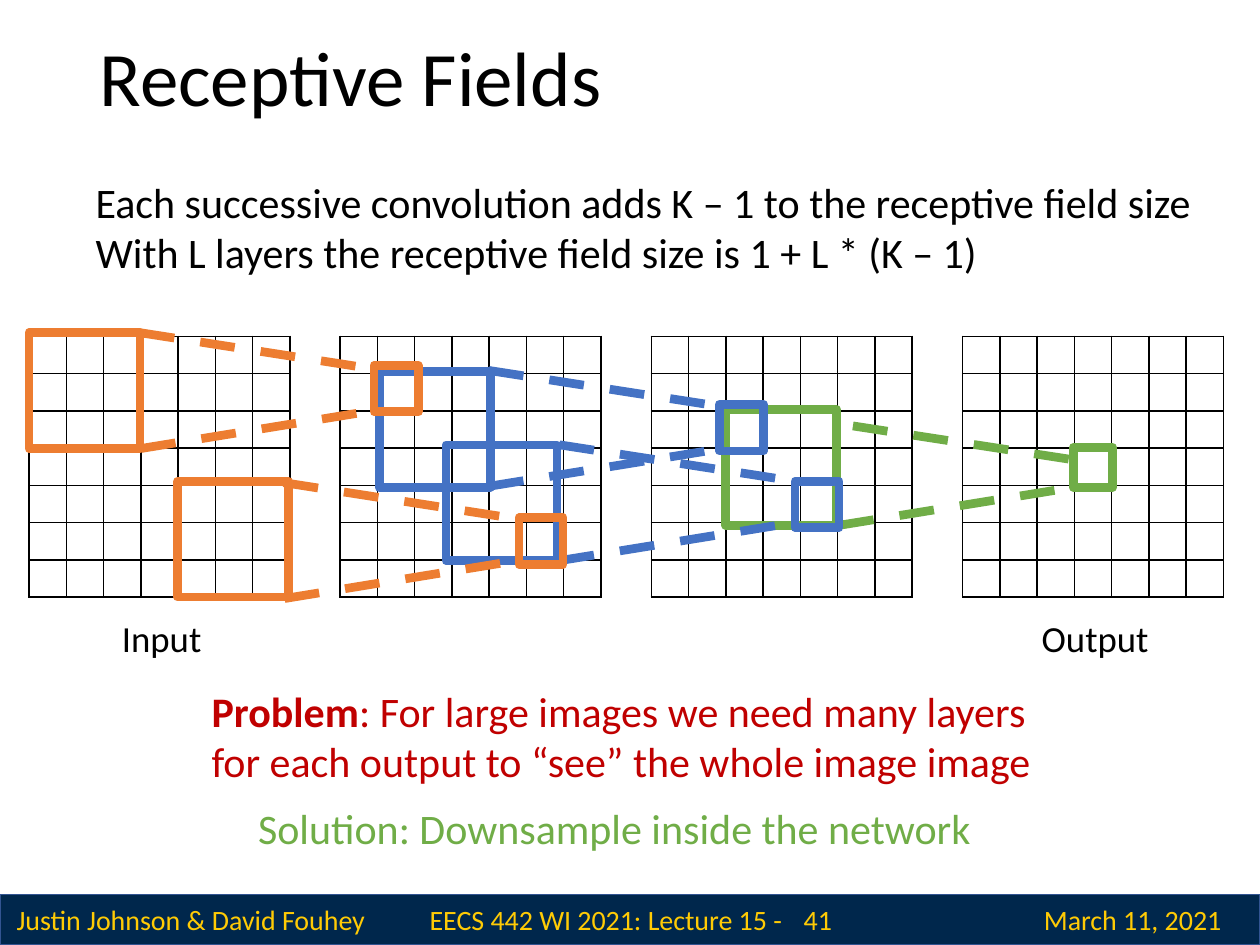
from lxml import etree
from pptx import Presentation
from pptx.dml.color import RGBColor
from pptx.enum.dml import MSO_LINE
from pptx.enum.shapes import MSO_CONNECTOR, MSO_SHAPE
from pptx.enum.text import MSO_ANCHOR, MSO_AUTO_SIZE, PP_ALIGN
from pptx.oxml import parse_xml
from pptx.oxml.ns import nsdecls, qn
from pptx.util import Pt

RECT = MSO_SHAPE.RECTANGLE
STRAIGHT = MSO_CONNECTOR.STRAIGHT
DASH = MSO_LINE.DASH
LEFT, CENTER = PP_ALIGN.LEFT, PP_ALIGN.CENTER
TOP, MIDDLE = MSO_ANCHOR.TOP, MSO_ANCHOR.MIDDLE
NO_FIT = MSO_AUTO_SIZE.NONE

BLACK, NAVY, MAIZE = "000000", "00274C", "FFCB05"
ORANGE, BLUE, GREEN, RED = "ED7D31", "4472C4", "70AD47", "C00000"
FIELD = (63.4, 66.2)
UNIT = (25.2, 26.6)
OUTPUT_UNIT = (22.3, 23)
CELLS = 7
CELL = 21.3


def rgb(value):
    return RGBColor.from_string(value)


class Deck:
    font = "Calibri"
    stroke = 5

    def __init__(self, prs):
        self.slide = prs.slides.add_slide(prs.slide_layouts[5])

    def style(self, p, size, color, align=LEFT):
        p.alignment = align
        p.font.name = self.font
        p.font.size = Pt(size)
        p.font.color.rgb = rgb(color)

    def title(self, text, x, y, w, h):
        sp = self.slide.shapes.title
        sp.left, sp.top, sp.width, sp.height = Pt(x), Pt(y), Pt(w), Pt(h)
        tf = sp.text_frame
        tf.text = text
        tf.auto_size = NO_FIT
        tf.vertical_anchor = MIDDLE
        p = tf.paragraphs[0]
        p.line_spacing = 0.9
        self.style(p, 44, BLACK)

    def text(self, lines, x, y, w, h, size, color=BLACK, align=LEFT,
             anchor=TOP, wrap=True):
        sp = self.slide.shapes.add_textbox(Pt(x), Pt(y), Pt(w), Pt(h))
        tf = sp.text_frame
        tf.word_wrap = wrap
        tf.vertical_anchor = anchor
        for i, runs in enumerate(lines):
            p = tf.add_paragraph() if i else tf.paragraphs[0]
            self.style(p, size, color, align)
            for text, bold in runs:
                r = p.add_run()
                r.text = text
                if bold:
                    r.font.bold = True

    def rect(self, x, y, w, h, line, width=stroke, fill=None):
        sp = self.slide.shapes.add_shape(RECT, Pt(x), Pt(y), Pt(w), Pt(h))
        sp.shadow.inherit = False
        if fill:
            sp.fill.solid()
            sp.fill.fore_color.rgb = rgb(fill)
        else:
            sp.fill.background()
        sp.line.color.rgb = rgb(line)
        sp.line.width = Pt(width)

    def dashed(self, x1, y1, x2, y2, color):
        line = self.slide.shapes.add_connector(STRAIGHT, Pt(x1), Pt(y1), Pt(x2), Pt(y2))
        line.line.color.rgb = rgb(color)
        line.line.width = Pt(self.stroke)
        line.line.dash_style = DASH
        etree.SubElement(line._element.spPr, qn("a:effectLst"))

    def grid(self, x, y):
        side = Pt(CELLS * CELL)
        table = self.slide.shapes.add_table(CELLS, CELLS, Pt(x), Pt(y), side, side).table
        table.first_row = table.horz_banding = False
        for band in (*table.columns,):
            band.width = Pt(CELL)
        for band in table.rows:
            band.height = Pt(CELL)
        for cell in table.iter_cells():
            cell.margin_left = cell.margin_right = 0
            cell.margin_top = cell.margin_bottom = 0
            cell.fill.background()
            end = etree.SubElement(cell.text_frame.paragraphs[0]._p, qn("a:endParaRPr"))
            end.set("sz", "800")
            tc_pr = cell._tc.get_or_add_tcPr()
            for i, side_name in enumerate(("lnL", "lnR", "lnT", "lnB")):
                tc_pr.insert(i, parse_xml(
                    f'<a:{side_name} {nsdecls("a")} w="12700"><a:solidFill>'
                    f'<a:srgbClr val="{BLACK}"/></a:solidFill></a:{side_name}>'))


def main():
    prs = Presentation()
    prs.slide_width, prs.slide_height = Pt(720), Pt(540)
    deck = Deck(prs)

    deck.rect(0, 511.2, 720, 28.8, "325491", 1, NAVY)
    for text, x, w in (
        ("Justin Johnson & David Fouhey", 0.7, 216.7),
        ("March 11, 2021", 575.3, 144),
        ("EECS 442 WI 2021: Lecture 15 - ", 234, 228.2),
        ("41", 435.6, 63.4),
    ):
        deck.text([[(text, False)]], x, 511.9, w, 26.6, 16, MAIZE, CENTER, MIDDLE)

    deck.title("Receptive Fields", 49.7, 14.4, 620.6, 64.8)
    deck.text([
        [("Each successive convolution adds K – 1 to the receptive field size", False)],
        [("With L layers the receptive field size is 1 + L * (K – 1)", False)],
    ], 47.5, 97.2, 646.6, 65.5, 24, wrap=False)

    for i in range(4):
        deck.grid(16.6 + i * 177.8, 192.2)
    for text, x, w in (("Input", 62.6, 60.5), ("Output", 588.2, 76.3)):
        deck.text([[(text, False)]], x, 348.5, w, 32.4, 21, wrap=False)

    deck.rect(414.7, 234, *FIELD, GREEN)
    deck.rect(613.4, 255.6, *OUTPUT_UNIT, GREEN)
    deck.dashed(479.5, 300.2, 617, 277.9, GREEN)
    deck.dashed(487.4, 243.4, 622.8, 264.2, GREEN)

    deck.dashed(279.4, 211.7, 414, 232.6, BLUE)
    for x, y in ((411.1, 231.1), (454.3, 275)):
        deck.rect(x, y, *UNIT, BLUE)
    for x, y in ((216.7, 212.4), (254.9, 254.2)):
        deck.rect(x, y, *FIELD, BLUE)
    for ends in (
        (279.4, 277.9, 416.9, 255.6),
        (319.7, 254.2, 454.3, 275),
        (319.7, 320.4, 457.2, 298.1),
    ):
        deck.dashed(*ends, BLUE)

    for x, y in ((213.8, 208.8), (296.6, 295.9)):
        deck.rect(x, y, *UNIT, ORANGE)
    for x, y in ((101.5, 275), (16.6, 190.1)):
        deck.rect(x, y, *FIELD, ORANGE)
    for x, y in ((79.9, 190.1), (162, 275.8)):
        deck.dashed(x, y, x + 134.6, y + 20.9, ORANGE)
        deck.dashed(x + 0.7, y + 66.2, x + 137.5, y + 43.9, ORANGE)

    deck.text([[
        ("Problem", True),
        (": For large images we need many layers for each output to “see” "
         "the whole image image", False),
    ]], 113.8, 388.1, 491.8, 65.5, 24, RED)
    deck.text([[("Solution: Downsample inside the network", False)]],
              140.4, 455, 439.2, 36, 24, GREEN)

    prs.save("out.pptx")


if __name__ == "__main__":
    main()
